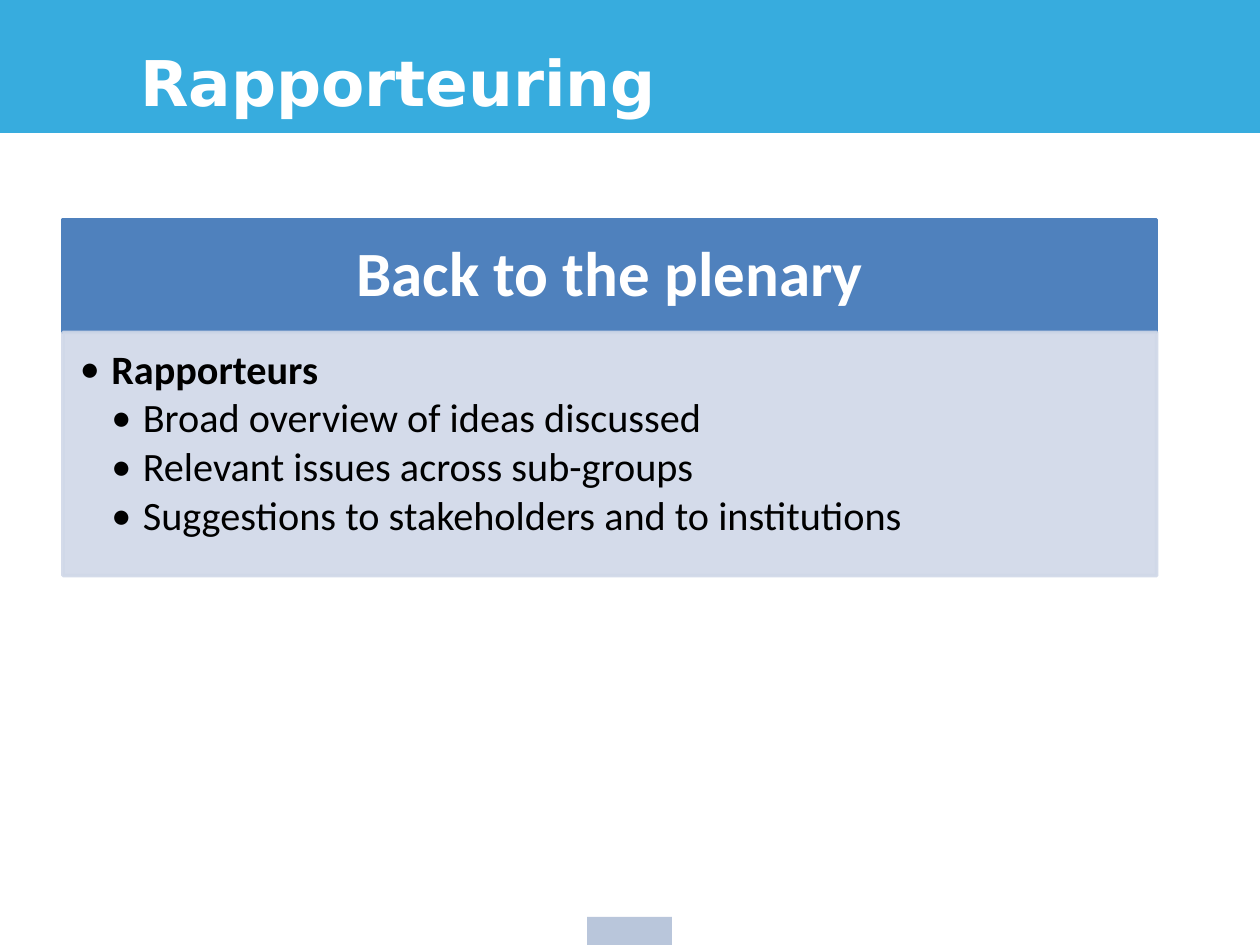
from lxml import etree
from pptx import Presentation
from pptx.dml.color import RGBColor
from pptx.enum.shapes import MSO_SHAPE as Preset
from pptx.enum.text import MSO_ANCHOR as Anchor, PP_ALIGN as Align
from pptx.oxml.ns import qn
from pptx.util import Pt

COLORS = {
    "banner": "37ACDE", "tab": "174389", "veil": "FFFFFF",
    "header": "4F81BD", "body": "D0D8E8", "light": "FFFFFF", "dark": "000000",
}

presentation = Presentation()
presentation.slide_width, presentation.slide_height = Pt(720), Pt(540)
slide = presentation.slides.add_slide(presentation.slide_layouts[6])


def add_box(color, left, top, width, height, line_width=0, opacity=100):
    shape = slide.shapes.add_shape(
        Preset.RECTANGLE, Pt(left), Pt(top), Pt(width), Pt(height))
    shape.shadow.inherit = False
    formats = [shape.fill]
    if line_width:
        shape.line.width = Pt(line_width)
        formats.append(shape.line.fill)
    else:
        shape.line.fill.background()
    for fill in formats:
        fill.solid()
        fill.fore_color.rgb = RGBColor.from_string(COLORS[color])
    if opacity < 100:
        for color_element in shape._element.spPr.iter(qn("a:srgbClr")):
            etree.SubElement(color_element, qn("a:alpha"), val=str(opacity * 1000))
    return shape


def write(paragraph, text, size, font_name, color, bold):
    paragraph.text = text
    font = paragraph.runs[0].font
    for name, value in {"size": Pt(size), "name": font_name, "bold": bold}.items():
        setattr(font, name, value)
    font.color.rgb = RGBColor.from_string(COLORS[color])


# Background: footer tab, banner and a translucent veil over the tab
add_box("tab", 335.5, 524, 48.5, 16)
add_box("banner", 0, 0, 720, 75.5, 0.75)
add_box("veil", 0, 77, 720, 463, opacity=70)

# Panel header
header = add_box("header", 36, 125.5, 625, 64.5, 2)
header_frame = header.text_frame
for name, value in {"margin_left": Pt(20), "margin_right": Pt(20),
                    "margin_top": Pt(11.5), "margin_bottom": Pt(11.5),
                    "vertical_anchor": Anchor.MIDDLE, "word_wrap": True}.items():
    setattr(header_frame, name, value)
paragraph = header_frame.paragraphs[0]
paragraph.alignment = Align.CENTER
paragraph.line_spacing = 0.9
write(paragraph, "Back to the plenary", 36, "Calibri", "light", True)

# Panel body with two bullet levels
body = add_box("body", 36, 190, 625, 139, 2, 90)
body_frame = body.text_frame
for name, value in {"margin_left": Pt(9.6), "margin_right": Pt(12.8),
                    "margin_top": Pt(9.6), "margin_bottom": Pt(14.4),
                    "vertical_anchor": Anchor.TOP, "word_wrap": True}.items():
    setattr(body_frame, name, value)
bullets = [
    (1, "Rapporteurs"),
    (2, "Broad overview of ideas discussed"),
    (2, "Relevant issues across sub-groups"),
    (2, "Suggestions to stakeholders and to institutions"),
]
for index, (level, text) in enumerate(bullets):
    paragraph = body_frame.add_paragraph() if index else body_frame.paragraphs[0]
    paragraph.alignment = Align.LEFT
    paragraph.level = level
    paragraph.line_spacing = 0.9
    paragraph.space_after = Pt(3.1)
    properties = paragraph._p.get_or_add_pPr()
    properties.set("marL", str(Pt(18 * level)))
    properties.set("indent", str(Pt(-18)))
    etree.SubElement(properties, qn("a:buFont"), typeface="Calibri")
    etree.SubElement(properties, qn("a:buChar"), char="•")
    write(paragraph, text, 23, "Calibri", "dark", level == 1)

# Slide title
title = slide.shapes.add_textbox(Pt(73), Pt(21.5), Pt(322), Pt(51))
title.text_frame.word_wrap = False
write(title.text_frame.paragraphs[0], "Rapporteuring", 36, "DejaVu Sans", "light", True)

presentation.save("out.pptx")
